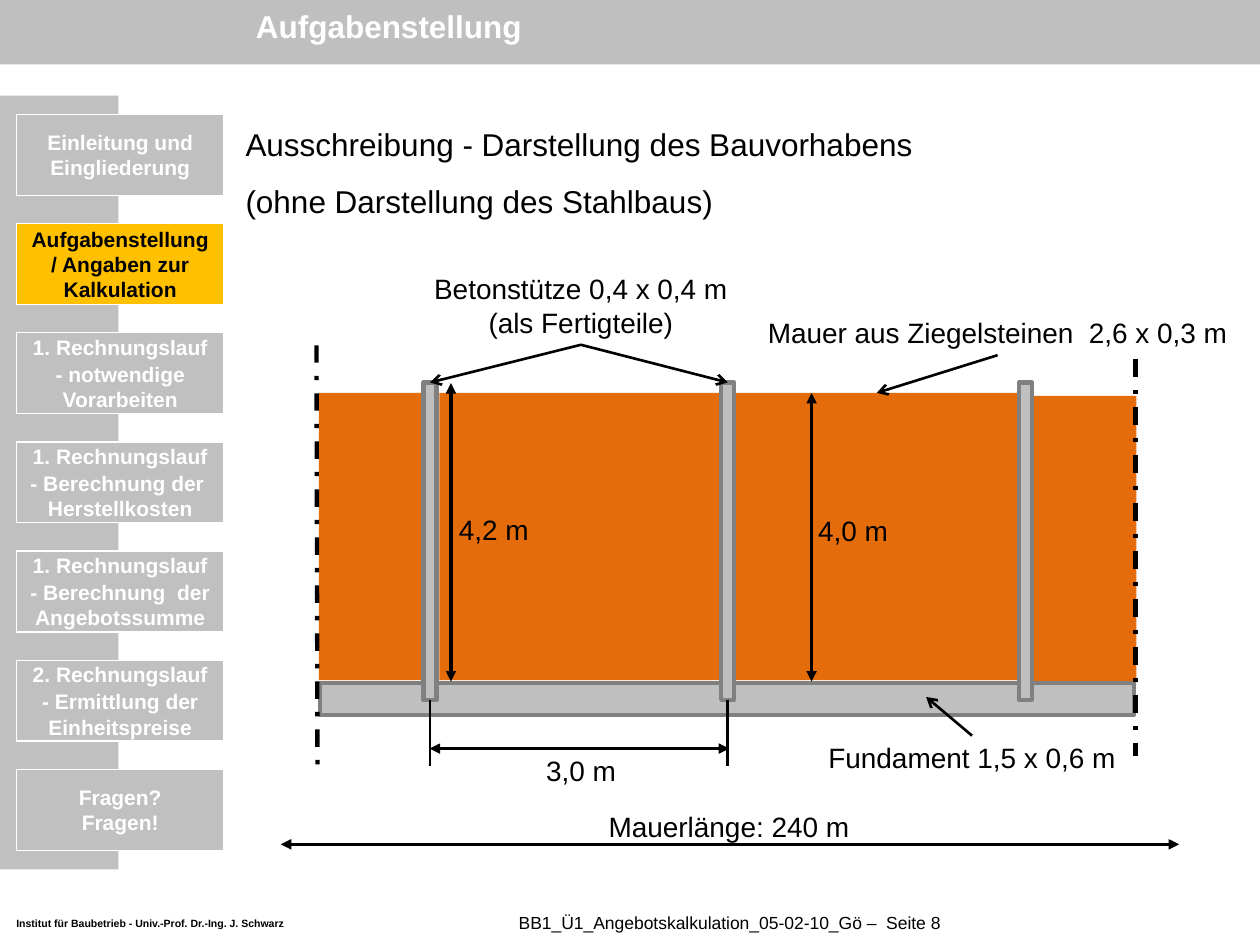
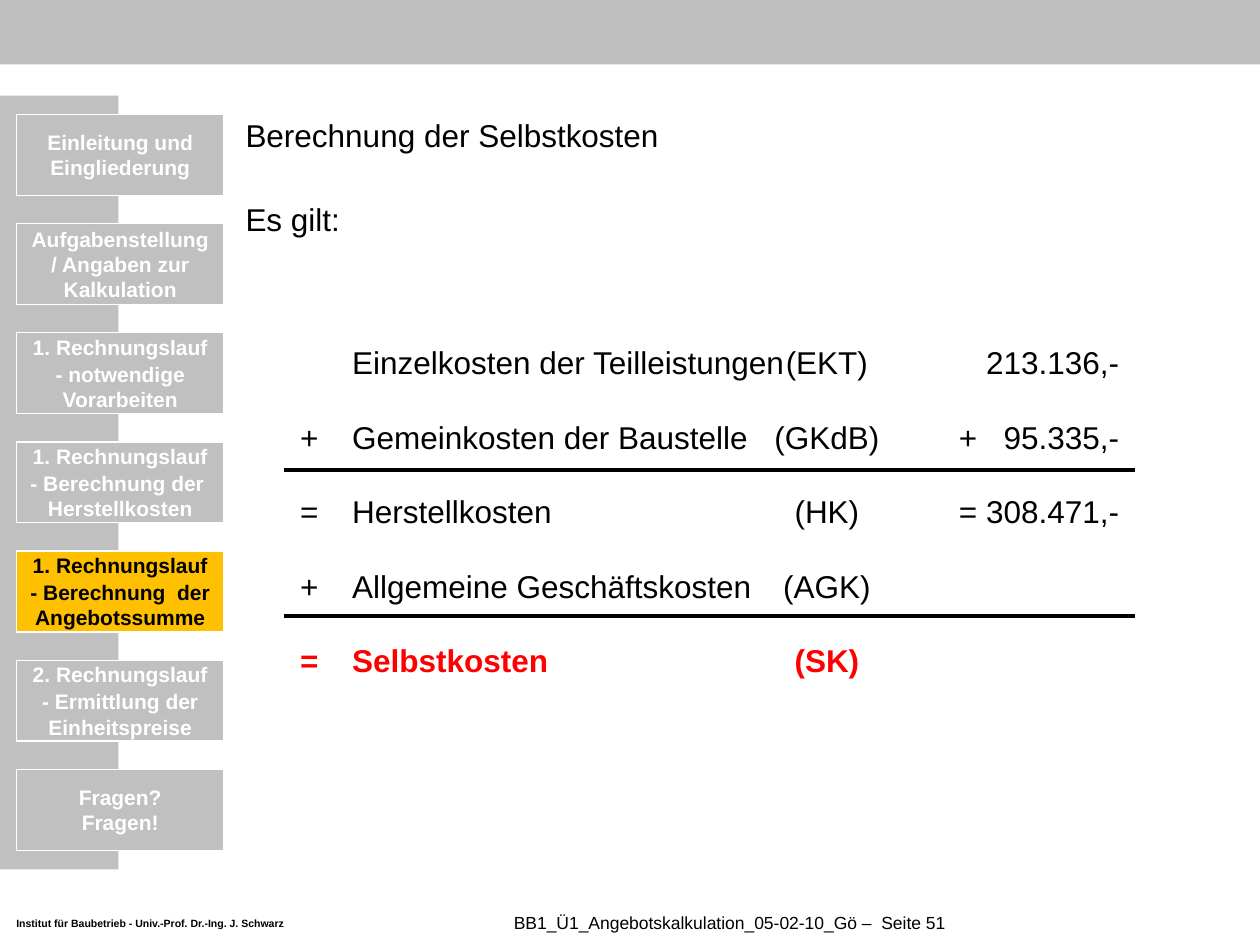
import dataclasses

import lxml.etree
import pptx
import pptx.dml.color
import pptx.enum.dml
import pptx.enum.shapes
import pptx.enum.text
import pptx.oxml.ns
import pptx.util

Cm, Pt = pptx.util.Cm, pptx.util.Pt
PP_ALIGN = pptx.enum.text.PP_ALIGN
MSO_ANCHOR = pptx.enum.text.MSO_ANCHOR
qn = pptx.oxml.ns.qn


@dataclasses.dataclass(frozen=True)
class Theme:
    font: str = "Arial"
    black: str = "000000"
    white: str = "FFFFFF"
    band: str = "BFBFBF"
    nav: str = "C0C0C0"
    active: str = "FFC000"
    brick: str = "E46C0A"
    edge: str = "808080"
    result: str = "FF0000"
    body: int = 18
    label: int = 16
    nav_size: int = 12
    footer: int = 10
    institute: int = 6


theme = Theme()
rgb = pptx.dml.color.RGBColor.from_string


def add_box(s, at, text="", fill=None, line=None, line_width=0.75, size=theme.body,
            color=theme.black, bold=False, align=PP_ALIGN.LEFT,
            anchor=MSO_ANCHOR.MIDDLE, inset=(0.1, 0.1), wrap=True):
    """Add a text box, or a rectangle if there is a fill; one paragraph per text line."""
    frame = [Cm(v) for v in at]
    if fill:
        sp = s.shapes.add_shape(pptx.enum.shapes.MSO_SHAPE.RECTANGLE, *frame)
        sp.shadow.inherit = False
        sp.fill.solid()
        sp.fill.fore_color.rgb = rgb(fill)
        if line:
            sp.line.color.rgb = rgb(line)
            sp.line.width = Pt(line_width)
        else:
            sp.line.fill.background()
    else:
        sp = s.shapes.add_textbox(*frame)
    if text:
        tf = sp.text_frame
        tf.word_wrap = wrap
        tf.vertical_anchor = anchor
        tf.margin_left = tf.margin_right = Cm(inset[0])
        tf.margin_top = tf.margin_bottom = Cm(inset[1])
        tf.text = text
        for p in tf.paragraphs:
            p.alignment = align
            p.font.name = theme.font
            p.font.size = Pt(size)
            p.font.bold = bold
            p.font.color.rgb = rgb(color)
    return sp


def add_line(s, start, end, width, head=None, tail=None, dash=None):
    """Add a line; each end is a point (x, y) or a joint (shape, side)."""
    joined = [hasattr(e[0], "shape_id") for e in (start, end)]
    points = [(0, 0) if j else e for j, e in zip(joined, (start, end))]
    c = s.shapes.add_connector(pptx.enum.shapes.MSO_CONNECTOR.STRAIGHT,
                               *[Cm(v) for point in points for v in point])
    if joined[0]:
        c.begin_connect(*start)
    if joined[1]:
        c.end_connect(*end)
    c.line.color.rgb = rgb(theme.black)
    c.line.width = Pt(width)
    if dash:
        c.line.dash_style = dash
    spPr = c.element.spPr
    for tag, kind in (("a:headEnd", head), ("a:tailEnd", tail)):
        if kind:
            lxml.etree.SubElement(spPr.find(qn("a:ln")), qn(tag), type=kind)
    lxml.etree.SubElement(spPr, qn("a:effectLst"))
    return c


prs = pptx.Presentation()
prs.slide_width, prs.slide_height = Cm(25.4), Cm(19.05)
task = prs.slides.add_slide(prs.slide_layouts[5])
costs = prs.slides.add_slide(prs.slide_layouts[6])

# Shared frame: band, sidebar, footers and chapter navigation
chapters = [
    "Einleitung und Eingliederung",
    "Aufgabenstellung / Angaben zur Kalkulation",
    "1. Rechnungslauf\n- notwendige Vorarbeiten",
    "1. Rechnungslauf\n- Berechnung der  Herstellkosten",
    "1. Rechnungslauf\n- Berechnung  der Angebotssumme",
    "2. Rechnungslauf\n- Ermittlung der Einheitspreise",
    "Fragen?\vFragen!",
]
for s, page, current in ((task, 8, 1), (costs, 51, 4)):
    add_box(s, (0, 0, 25.4, 1.3), fill=theme.band)
    add_box(s, (0, 1.93, 2.39, 15.6), fill=theme.nav)
    add_box(s, (0.33, 18.49, 5.46, 0.25),
            "Institut für Baubetrieb - Univ.-Prof. Dr.-Ing. J. Schwarz",
            size=theme.institute, bold=True, inset=(0, 0), wrap=False)
    add_box(s, (7.01, 18.21, 15.39, 0.79),
            f"BB1_Ü1_Angebotskalkulation_05-02-10_Gö –  Seite {page}",
            size=theme.footer, align=PP_ALIGN.CENTER, inset=(0.25, 0))
    for i, chapter in enumerate(chapters):
        active = i == current
        sp = add_box(s, (0.33, 2.31 + 2.2 * i, 4.19, 1.63), chapter,
                     fill=theme.active if active else theme.nav, line=theme.white,
                     size=theme.nav_size, bold=True, align=PP_ALIGN.CENTER,
                     color=theme.black if active else theme.white, inset=(0.25, 0.13))
        for p in sp.text_frame.paragraphs[1:]:
            p.space_before = Pt(1)

# Slide 1: title, in front of the band
s = task
title = s.shapes.title
s.shapes.element.append(title.element)
title.left, title.top, title.width, title.height = Cm(5.11), Cm(0.1), Cm(20.19), Cm(0.86)
tf = title.text_frame
tf.text = "Aufgabenstellung"
tf.vertical_anchor = MSO_ANCHOR.MIDDLE
tf.margin_left = tf.margin_right = tf.margin_top = tf.margin_bottom = Cm(0.05)
p = tf.paragraphs[0]
p.alignment = PP_ALIGN.LEFT
p.font.name = theme.font
p.font.size = Pt(theme.body)
p.font.bold = True
p.font.color.rgb = rgb(theme.white)

# Introduction
sp = add_box(s, (4.7, 2.01, 19.5, 2.57),
             "Ausschreibung - Darstellung des Bauvorhabens\n(ohne Darstellung des Stahlbaus)",
             anchor=MSO_ANCHOR.TOP, inset=(0.25, 0.13))
for p in sp.text_frame.paragraphs:
    p.line_spacing = 1.5

# Brick wall, foundation and concrete columns
walls = [add_box(s, (left, top, width, 5.79), fill=theme.brick)
         for left, top, width in ((6.43, 7.92, 2.08), (8.86, 7.92, 5.69),
                                  (14.83, 7.92, 5.69), (20.83, 7.98, 2.08))]
add_box(s, (6.45, 13.77, 16.41, 0.64), fill=theme.band, line=theme.edge, line_width=2.5)
columns = [add_box(s, (8.54 + 6 * i, 7.71, 0.26, 6.4), fill=theme.band,
                   line=theme.edge, line_width=2.5) for i in range(3)]

# Section limits
for start, end in (((6.38, 6.96), (6.4, 15.52)), ((22.89, 7.24), (22.89, 15.24))):
    add_line(s, start, end, 2.5, dash=pptx.enum.dml.MSO_LINE.DASH_DOT)

# Labels
labels = {}
for text, at in (
    ("3,0 m", (10.9, 15.09, 1.63, 0.89)),
    ("Betonstütze 0,4 x 0,4 m\n(als Fertigteile)", (8.61, 5.38, 6.2, 1.57)),
    ("Mauer aus Ziegelsteinen  2,6 x 0,3 m", (15.32, 6.27, 9.58, 0.89)),
    ("4,2 m", (9.14, 10.24, 1.63, 0.89)),
    ("4,0 m", (16.38, 10.26, 1.63, 0.89)),
    ("Mauerlänge: 240 m", (12.14, 16.21, 5.11, 0.89)),
    ("Fundament 1,5 x 0,6 m", (16.56, 14.83, 6.07, 0.89)),
):
    labels[text.split()[0]] = add_box(s, at, text, size=theme.label, wrap=False,
                                      align=PP_ALIGN.CENTER, anchor=MSO_ANCHOR.TOP)

# Pointers from labels to parts, and extension lines below the columns
for column in columns[:2]:
    add_line(s, (labels["Betonstütze"], 2), (column, 0), 1.5, tail="arrow")
    x = column.left.cm + column.width.cm / 2
    add_line(s, (column, 2), (x, 15.45), 1.5)
add_line(s, (labels["Mauer"], 2), (walls[2], 0), 1.5, tail="arrow")
add_line(s, (labels["Fundament"], 0), (18.67, 14.05), 1.5, tail="arrow")

# Dimension lines
for start, end in (((8.66, 15.09), (14.7, 15.09)), ((9.09, 7.72), (9.09, 13.74)),
                   ((16.36, 7.92), (16.36, 13.74)), ((5.66, 17.02), (23.77, 17.02))):
    add_line(s, start, end, 2, head="triangle", tail="triangle")

# Slide 2: introduction
s = costs
sp = add_box(s, (4.7, 2.01, 20.6, 2.95), "Berechnung der Selbstkosten\nEs gilt:",
             anchor=MSO_ANCHOR.TOP, inset=(0.25, 0.13))
for p in sp.text_frame.paragraphs:
    p.line_spacing = Pt(27)
p.space_before = Pt(21.5)

# Cost build-up: sign, item, abbreviation, sign, amount
fields = [(5.95, 0.8, PP_ALIGN.LEFT), (7, 9, PP_ALIGN.LEFT), (15.3, 2.74, PP_ALIGN.CENTER),
          (19.23, 0.8, PP_ALIGN.LEFT), (19.66, 3, PP_ALIGN.RIGHT)]
rows = [
    ("", "Einzelkosten der Teilleistungen", "(EKT)", "", "213.136,-"),
    ("+", "Gemeinkosten der Baustelle", "(GKdB)", "+", "95.335,-"),
    ("=", "Herstellkosten", "(HK)", "=", "308.471,-"),
    ("+", "Allgemeine Geschäftskosten", "(AGK)", "", ""),
    ("=", "Selbstkosten", "(SK)", "", ""),
]
for i, row in enumerate(rows):
    total = row is rows[-1]
    for text, (left, width, align) in zip(row, fields):
        if text:
            add_box(s, (left, 6.82 + 1.5 * i, width, 0.97), text, align=align, bold=total,
                    color=theme.result if total else theme.black)

# Sum rules
for y in (9.47, 12.42):
    add_line(s, (5.72, y), (22.89, y), 2)

prs.save("out.pptx")
